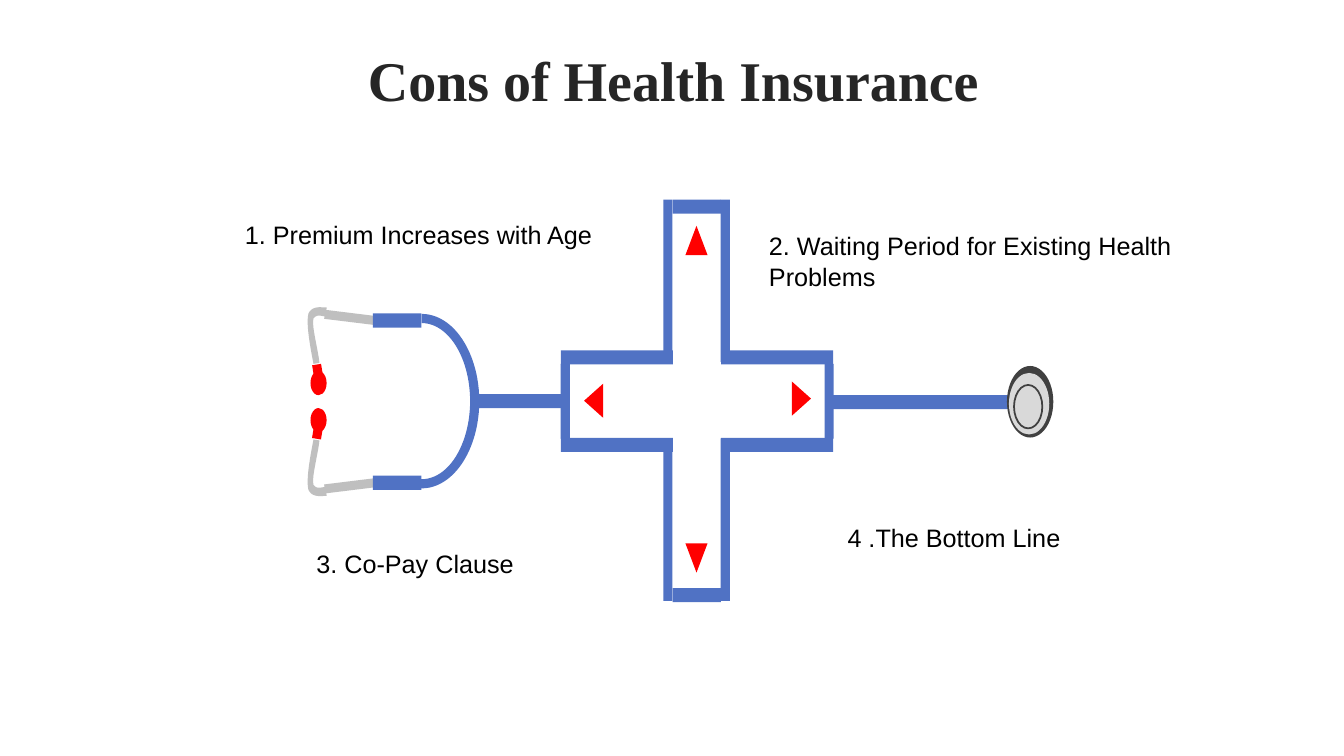
"""Build the health insurance drawbacks slide with its stethoscope cross."""
from dataclasses import dataclass

from pptx import Presentation
from pptx import util as u
from pptx.dml.color import RGBColor
from pptx.enum import shapes, text

TITLE = "Cons of Health Insurance"
LABELS = [
    ("1. Premium Increases with Age", (167.8, 153.4, 265, 28.8), False),
    ("2. Waiting Period for Existing Health Problems", (542.2, 161.3, 371.5, 51.1), True),
    ("3. Co-Pay Clause", (218.9, 388.1, 162, 28.8), False),
    ("4 .The Bottom Line", (598.3, 369.4, 167.8, 28.8), False),
]
TITLE_BOX = (25.2, 31, 911.5, 57)
AXIS = 286.9
THIN, THICK = 6.5, 10.1
TUBES = [(340.6, 281.5, 61.9, THICK), (594.7, 282.2, 126.7, THICK)]
CAPS = [
    (480.4, 142.6, 34.6, THICK),
    (480.4, 420.1, 34.6, THICK),
    (400.5, 260, THIN, 53.3),
    (589, 260, THIN, 53.3),
]
ARROWS = [
    ((489.6, 161.3, 15.8, 20.9), 0),
    ((560.2, 277.9, 24.5, 13.7), 90),
    ((489.6, 388.1, 15.8, 20.9), 180),
    ((411.8, 279.4, 24.5, 13.7), 270),
]
HOOK_START = (233.3, 219.6)
HOOK = [
    [(229, 219.6), (223.2, 218.2), (220.3, 223.9)],
    [(218.2, 231.8), (222.5, 252), (223.9, 259.9)],
    [(228.2, 259.2)],
    [(226.8, 247.7), (222.5, 232.6), (223.9, 227.5)],
    [(226.1, 224.6), (228.2, 225.4), (232.6, 226.1)],
]


@dataclass(frozen=True)
class Theme:
    """Colours, fonts and type sizes."""
    blue: str = "5072C4"
    red: str = "FF0000"
    tube: str = "BFBFBF"
    rim: str = "404040"
    disc: str = "D9D9D9"
    title: str = "262626"
    label: str = "000000"
    title_font: str = "Times New Roman"
    label_font: str = "Arial"
    title_size: int = 40
    label_size: int = 18


T = Theme()
KIND = shapes.MSO_SHAPE


def points(values):
    """Convert numbers to point lengths."""
    return [u.Pt(v) for v in values]


def paint(sp, color, line=None):
    """Fill a shape, with an outline only when given."""
    sp.shadow.inherit = False
    sp.fill.solid()
    sp.fill.fore_color.rgb = RGBColor.from_string(color)
    if line:
        sp.line.color.rgb = RGBColor.from_string(line)
        sp.line.width = u.Pt(1.25)
    else:
        sp.line.fill.background()


def draw(parent, kind, box, color, turn=0, line=None):
    """Add one painted preset shape."""
    sp = parent.add_shape(kind, *points(box))
    sp.rotation = turn
    paint(sp, color, line)
    return sp


def style(p, font, size, color, bold=False):
    """Format a whole paragraph."""
    p.font.name, p.font.size, p.font.bold = font, u.Pt(size), bold
    p.font.color.rgb = RGBColor.from_string(color)


def hook_outline(steps=10):
    """Trace the curved ear tube as short segments."""
    outline = [HOOK_START]
    for part in HOOK:
        if len(part) == 1:
            outline += part
            continue
        curve = [outline[-1], *part]
        for i in range(1, steps + 1):
            t = i / steps
            weights = ((1 - t) ** 3, 3 * t * (1 - t) ** 2, 3 * t * t * (1 - t), t ** 3)
            outline.append(tuple(sum(w * c[k] for w, c in zip(weights, curve)) for k in (0, 1)))
    return outline


def draw_earpiece(parent, mirrored):
    """Add the upper earpiece, or its reflection in the axis."""
    def flip(y):
        return 2 * AXIS - y if mirrored else y

    parts = [
        (KIND.OVAL, (221.8, 265, 11.5, 17.3), T.red, 0),
        (KIND.RECTANGLE, (222.5, 261.4, 8.6, THIN), T.red, 80.7),
        (KIND.RECTANGLE, (249.8, 205.9, THIN, 42.5), T.tube, 97),
        (KIND.RECTANGLE, (266.4, 223.9, 34.6, THICK), T.blue, 0),
    ]
    for kind, (x, y, w, h), color, turn in parts:
        top = flip(y + h) if mirrored else y
        draw(parent, kind, (x, top, w, h), color, -turn if mirrored else turn)
    outline = [points((x, flip(y))) for x, y in hook_outline()]
    builder = parent.build_freeform(*outline[0])
    builder.add_line_segments(outline[1:], close=True)
    paint(builder.convert_to_shape(), T.tube)


def draw_cross(parent):
    """Add the cross outline and its four arrowheads."""
    sides = [(x, y, THIN, 116) for x in (473.8, 514.8) for y in (142.6, 313.2)]
    arms = [(x, y, 80, THICK) for x in (400.7, 515.2) for y in (250.2, 312.8)]
    for box in sides + arms + CAPS:
        draw(parent, KIND.RECTANGLE, box, T.blue)
    for box, turn in ARROWS:
        draw(parent, KIND.ISOSCELES_TRIANGLE, box, T.red, turn)


def draw_stethoscope(parent):
    """Add the tubes, chest piece, earpieces and yoke."""
    for box in TUBES:
        draw(parent, KIND.RECTANGLE, box, T.blue)
    draw(parent, KIND.OVAL, (719.3, 261.4, 33.1, 51.1), T.rim)
    draw(parent, KIND.OVAL, (720.7, 266.4, 28.8, 43.9), T.disc)
    draw(parent, KIND.OVAL, (724.3, 275, 20.2, 31), T.disc, line=T.rim)
    for mirrored in (False, True):
        draw_earpiece(parent, mirrored)
    yoke = draw(parent, KIND.BLOCK_ARC, (239, 245.5, 124.6, 82.1), T.blue, 90)
    for i, value in enumerate((107.89, 0.66, 0.08)):
        yoke.adjustments[i] = value


def main():
    """Assemble and save the slide."""
    prs = Presentation()
    prs.slide_width, prs.slide_height = points((960, 540))
    s = prs.slides.add_slide(prs.slide_layouts[5])

    title = s.shapes.title
    title.left, title.top, title.width, title.height = points(TITLE_BOX)
    tf = title.text_frame
    tf.text = TITLE
    tf.auto_size = text.MSO_AUTO_SIZE.NONE
    tf.vertical_anchor = text.MSO_ANCHOR.MIDDLE
    p = tf.paragraphs[0]
    p.alignment, p.line_spacing = text.PP_ALIGN.CENTER, 0.9
    style(p, T.title_font, T.title_size, T.title, True)

    figure = s.shapes.add_group_shape().shapes
    draw_stethoscope(figure)
    draw_cross(figure)

    for words, box, wrap in LABELS:
        tf = s.shapes.add_textbox(*points(box)).text_frame
        tf.text = words
        tf.word_wrap = wrap
        tf.auto_size = text.MSO_AUTO_SIZE.SHAPE_TO_FIT_TEXT
        style(tf.paragraphs[0], T.label_font, T.label_size, T.label)

    prs.save("out.pptx")


if __name__ == "__main__":
    main()
